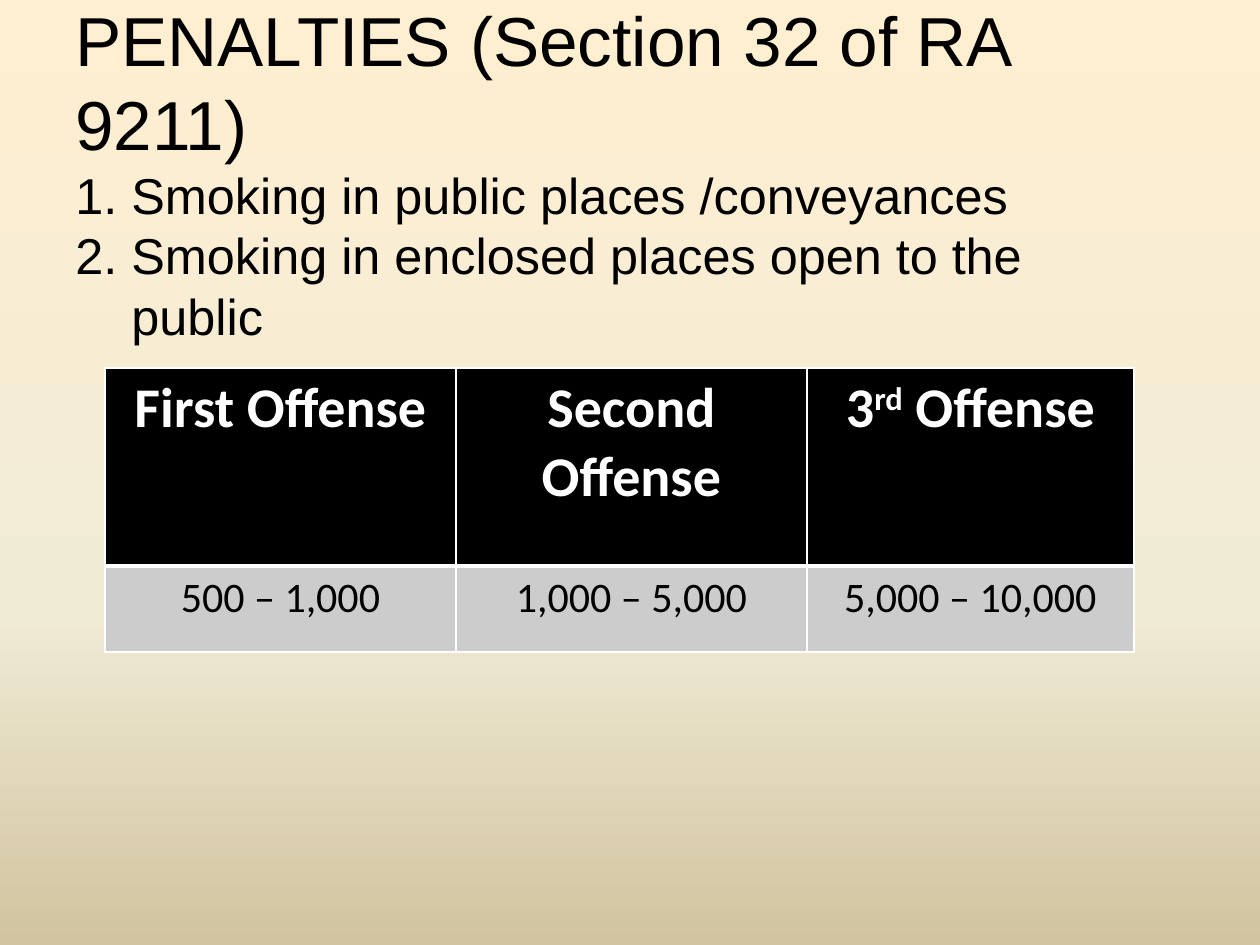
"""Build the slide on penalties under Section 32 of RA 9211."""
from copy import deepcopy

from lxml import etree
from pptx import Presentation
from pptx.dml.color import RGBColor
from pptx.enum.text import MSO_ANCHOR, PP_ALIGN
from pptx.oxml.ns import qn
from pptx.util import Pt

SCALE = 914400 / 126
MIDDLE = MSO_ANCHOR.MIDDLE
CENTER = PP_ALIGN.CENTER
BLACK = RGBColor(0x00, 0x00, 0x00)
WHITE = RGBColor(0xFF, 0xFF, 0xFF)
GRAY = RGBColor(0xCC, 0xCC, 0xCC)
CREAM = RGBColor(0xFF, 0xEF, 0xD1)
IVORY = RGBColor(0xF0, 0xEB, 0xD5)
SAND = RGBColor(0xD1, 0xC3, 0x9F)

HEADING = "PENALTIES (Section 32 of RA 9211)"
OFFENSES = [
    ["1. Smoking in public places /conveyances"],
    ["2. Smoking in enclosed places open to the", "public"],
]
HEADERS = [
    [("First Offense", 0)],
    [("Second Offense", 0)],
    [("3", 0), ("rd", 30000), (" Offense", 0)],
]
FINES = [[(fine, 0)] for fine in ("500 – 1,000", "1,000 – 5,000", "5,000 – 10,000")]


def px(length):
    return round(length * SCALE)


class SlideBuilder:
    def __init__(self, slide):
        self.slide = slide
        self.text_font = "Arial"
        self.table_font = "Calibri"

    def background(self, stops):
        fill = self.slide.background.fill
        fill.gradient()
        fill.gradient_angle = 270
        stop_list = self.slide.element.find(".//" + qn("a:gsLst"))
        stop_list.insert(1, deepcopy(stop_list[0]))
        for stop, (position, color) in zip(fill.gradient_stops, stops):
            stop.position = position
            stop.color.rgb = color

    def run(self, paragraph, text, font, size, color, bold=False):
        run = paragraph.add_run()
        run.text = text
        run.font.name = font
        run.font.size = Pt(size)
        run.font.color.rgb = color
        run.font.bold = bold
        return run

    def title(self, left, top, width, height, heading, items, indent):
        shape = self.slide.shapes.add_textbox(px(left), px(top), px(width), px(height))
        frame = shape.text_frame
        frame.word_wrap = True
        frame.vertical_anchor = MIDDLE
        self.run(frame.paragraphs[0], heading, self.text_font, 39.6, BLACK)
        for lines in items:
            paragraph = frame.add_paragraph()
            properties = paragraph._p.get_or_add_pPr()
            properties.set("marL", str(px(indent)))
            properties.set("indent", str(-px(indent)))
            for number, line in enumerate(lines):
                if number:
                    paragraph.add_line_break()
                self.run(paragraph, line, self.text_font, 28.8, BLACK)

    def borders(self, cell, widths):
        properties = cell._tc.get_or_add_tcPr()
        for side, width in zip(("lnL", "lnR", "lnT", "lnB"), widths):
            line = etree.SubElement(properties, qn("a:" + side), w=str(Pt(width)))
            fill = etree.SubElement(line, qn("a:solidFill"))
            etree.SubElement(fill, qn("a:srgbClr"), val=str(WHITE))

    def cell(self, cell, parts, size, color, fill, bold, widths):
        self.borders(cell, widths)
        cell.fill.solid()
        cell.fill.fore_color.rgb = fill
        paragraph = cell.text_frame.paragraphs[0]
        paragraph.alignment = CENTER
        for text, baseline in parts:
            run = self.run(paragraph, text, self.table_font, size, color, bold)
            if baseline:
                run._r.get_or_add_rPr().set("baseline", str(baseline))

    def table(self, left, top, widths, heights, headers, values):
        frame = self.slide.shapes.add_table(
            len(heights), len(widths), px(left), px(top), px(sum(widths)), px(sum(heights))
        )
        table = frame.table
        for column, width in zip(table.columns, widths):
            column.width = px(width)
        for row, height in zip(table.rows, heights):
            row.height = px(height)
        for column, (header, value) in enumerate(zip(headers, values)):
            self.cell(table.cell(0, column), header, 32, WHITE, BLACK, True, (1, 1, 1, 3))
            self.cell(table.cell(1, column), value, 24, BLACK, GRAY, False, (1, 1, 3, 1))


def main():
    presentation = Presentation()
    presentation.slide_width = px(1260)
    presentation.slide_height = px(945)
    builder = SlideBuilder(presentation.slides.add_slide(presentation.slide_layouts[6]))
    builder.background([(0, CREAM), (0.65, IVORY), (1, SAND)])
    builder.title(63, 38, 1134, 267, HEADING, OFFENSES, 56)
    builder.table(105, 368, (351, 351, 327), (198, 86), HEADERS, FINES)
    presentation.save("out.pptx")


if __name__ == "__main__":
    main()
